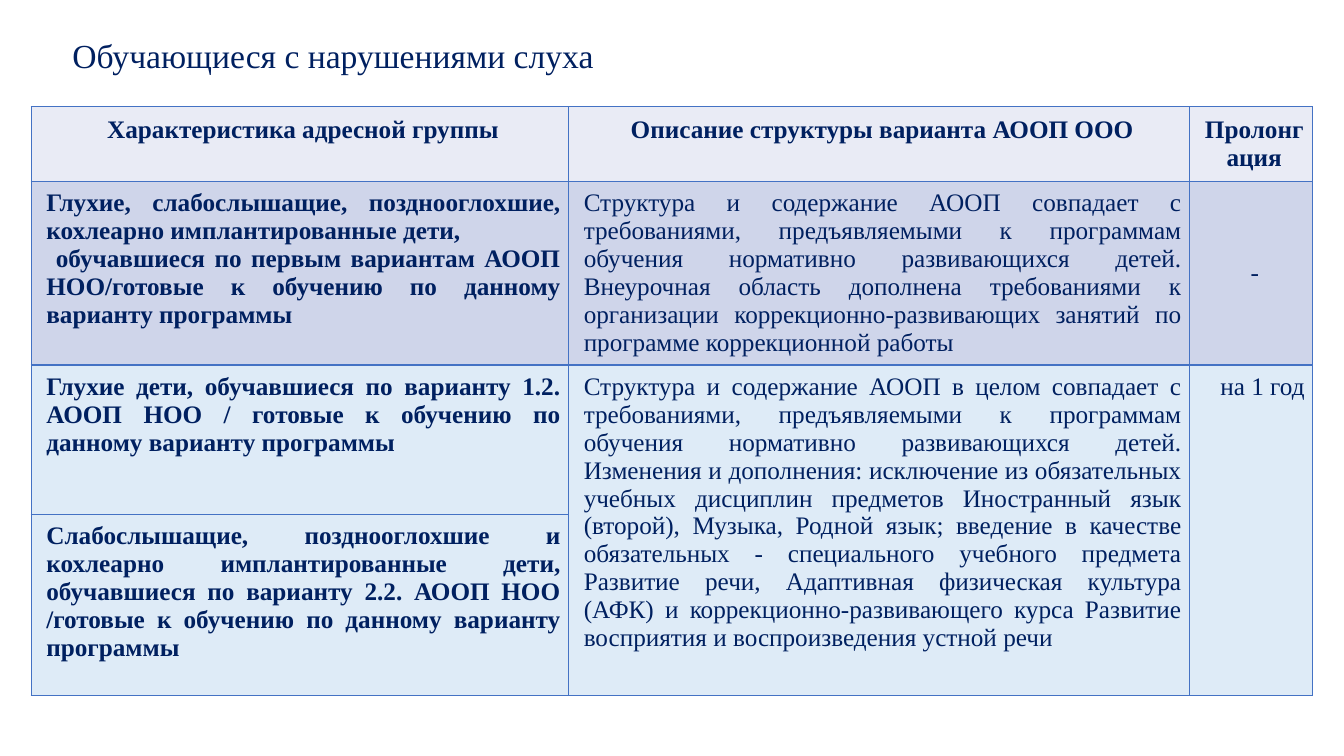
from lxml.etree import SubElement
from pptx import Presentation
from pptx.dml.color import RGBColor
from pptx.enum.text import MSO_ANCHOR as ANCHOR, PP_ALIGN as ALIGN
from pptx.oxml.ns import qn
from pptx.util import Inches, Pt

WIDTH, HEIGHT = 13.33, 7.5
FONT = "Times New Roman"
COLORS = {
    "text": "002060",
    "border": "4472C4",
    "header": "E9EBF5",
    "first": "CFD5EA",
    "second": "DEEBF7",
}
COLUMNS = [5.33, 6.16, 1.22]
ROWS = [0.74, 1.81, 1.48, 1.8]
ROW_FILLS = ["header", "first", "second", "second"]

TITLE = "Обучающиеся с нарушениями слуха"
HEADERS = ["Характеристика адресной группы",
           "Описание структуры варианта АООП ООО",
           "Пролонгация"]
GROUPS = [
    "Глухие, слабослышащие, позднооглохшие, кохлеарно имплантированные дети,\n"
    " обучавшиеся по первым вариантам АООП НОО/готовые к обучению по данному "
    "варианту программы",
    "Глухие дети, обучавшиеся по варианту 1.2. АООП НОО / готовые к обучению "
    "по данному варианту программы",
    "Слабослышащие, позднооглохшие и кохлеарно имплантированные дети, "
    "обучавшиеся по варианту 2.2. АООП НОО /готовые к обучению по данному "
    "варианту программы",
]
STRUCTURES = [
    "Структура и содержание АООП совпадает с требованиями, предъявляемыми к "
    "программам обучения нормативно развивающихся детей. Внеурочная область "
    "дополнена требованиями к организации коррекционно-развивающих занятий по "
    "программе коррекционной работы",
    "Структура и содержание АООП в целом совпадает с требованиями, "
    "предъявляемыми к программам обучения нормативно развивающихся детей. "
    "Изменения и дополнения: исключение из обязательных учебных дисциплин "
    "предметов Иностранный язык (второй), Музыка, Родной язык; введение в "
    "качестве обязательных - специального учебного предмета Развитие речи, "
    "Адаптивная физическая культура (АФК) и коррекционно-развивающего курса "
    "Развитие восприятия и воспроизведения устной речи",
]


def rgb(name):
    return RGBColor.from_string(COLORS[name])


def write(tf, text, size=18, bold=False, align=ALIGN.LEFT, spacing=None):
    """Fill a text frame, one paragraph per line of text."""
    tf.word_wrap = True
    for i, line in enumerate(text.split("\n")):
        p = tf.add_paragraph() if i else tf.paragraphs[0]
        p.alignment = align
        p.line_spacing = spacing
        r = p.add_run()
        r.text = line
        r.font.name, r.font.size, r.font.bold = FONT, Pt(size), bold
        r.font.color.rgb = rgb("text")


def add_title(s, text):
    box = s.shapes.add_textbox(Inches(0.62), Inches(-0.15),
                               Inches(11.5), Inches(1.45))
    box.text_frame.vertical_anchor = ANCHOR.MIDDLE
    write(box.text_frame, text, size=24, spacing=0.9)


def style_cell(cell, fill, pad):
    # Borders come before the fill in the cell properties
    tc_pr = cell._tc.get_or_add_tcPr()
    for side in "LRTB":
        ln = SubElement(tc_pr, qn(f"a:ln{side}"), w=str(Pt(1)))
        solid = SubElement(ln, qn("a:solidFill"))
        SubElement(solid, qn("a:srgbClr"), val=COLORS["border"])
    cell.fill.solid()
    cell.fill.fore_color.rgb = rgb(fill)
    cell.margin_left = Inches(0.15)
    cell.margin_right = cell.margin_top = cell.margin_bottom = Inches(pad)


def add_grid(s):
    """Add the bordered table with its row colours and no text."""
    table = s.shapes.add_table(
        len(ROWS), len(COLUMNS), Inches(0.31), Inches(1.06),
        Inches(sum(COLUMNS)), Inches(sum(ROWS))).table
    for column, width in zip(table.columns, COLUMNS):
        column.width = Inches(width)
    for row, height, fill in zip(table.rows, ROWS, ROW_FILLS):
        row.height = Inches(height)
        for cell in row.cells:
            style_cell(cell, fill, 0.09 if fill == "header" else 0.08)
    return table


def main():
    prs = Presentation()
    prs.slide_width, prs.slide_height = Inches(WIDTH), Inches(HEIGHT)
    s = prs.slides.add_slide(prs.slide_layouts[6])

    table = add_grid(s)
    # The last two groups share one description and one extension
    for col in (1, 2):
        table.cell(2, col).merge(table.cell(3, col))

    for col, text in enumerate(HEADERS):
        write(table.cell(0, col).text_frame, text, bold=True,
              align=ALIGN.CENTER)
    for row, text in enumerate(GROUPS, 1):
        write(table.cell(row, 0).text_frame, text, bold=True,
              align=ALIGN.JUSTIFY)
    for row, text in enumerate(STRUCTURES, 1):
        write(table.cell(row, 1).text_frame, text, align=ALIGN.JUSTIFY)

    # Extension column
    table.cell(1, 2).vertical_anchor = ANCHOR.MIDDLE
    write(table.cell(1, 2).text_frame, "-", align=ALIGN.CENTER)
    write(table.cell(2, 2).text_frame, "на 1 год", align=ALIGN.RIGHT)

    add_title(s, TITLE)
    prs.save("out.pptx")


if __name__ == "__main__":
    main()
